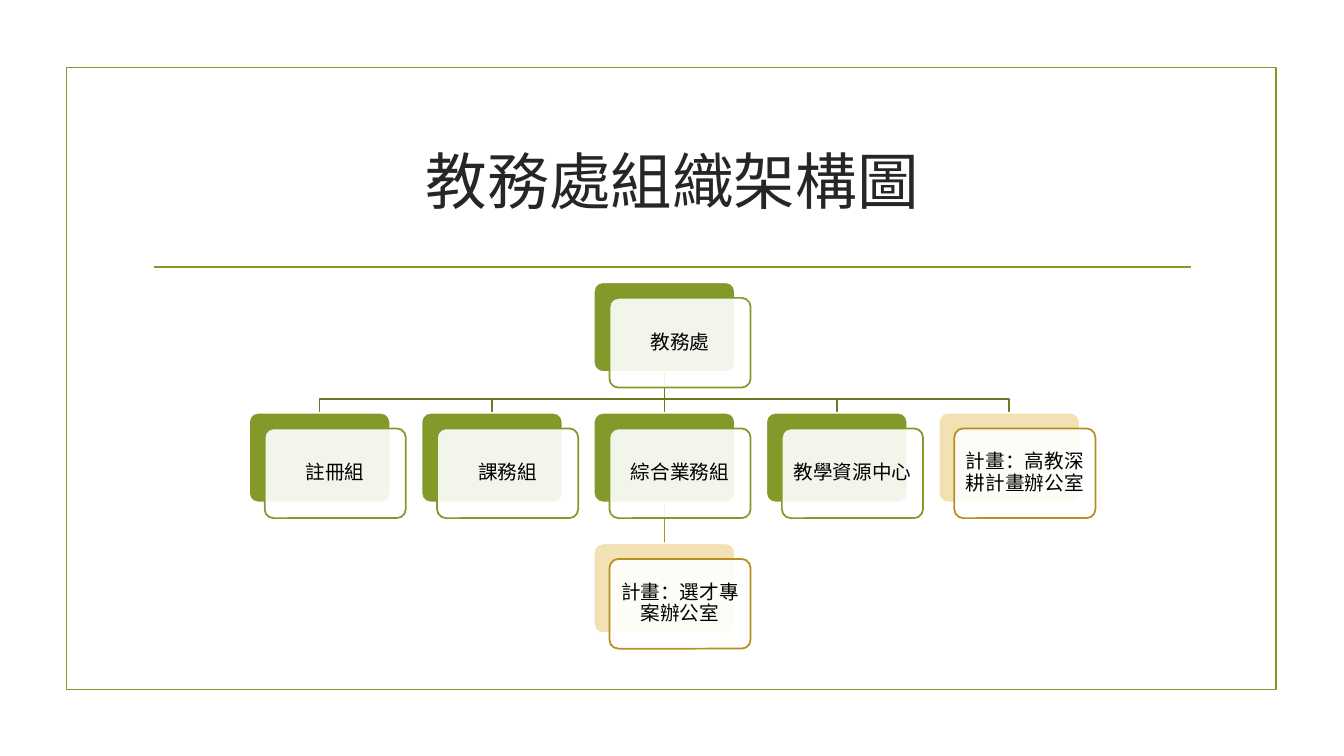
from lxml import etree
from pptx import Presentation
from pptx import util as u
from pptx.dml.color import RGBColor
from pptx.enum import shapes, text
from pptx.oxml.ns import qn

THEME = {
    "font": "Times New Roman",
    "title_size": u.Pt(44),
    "label_size": u.Pt(14),
    "line_width": u.Pt(1.25),
    "title": RGBColor.from_string("262626"),
    "label": RGBColor.from_string("000000"),
    "white": RGBColor.from_string("FFFFFF"),
    "green": RGBColor.from_string("83992A"),
    "dark_green": RGBColor.from_string("697B22"),
    "gold": RGBColor.from_string("B78E20"),
    "pale_gold": RGBColor.from_string("F2E1B3"),
}


def style_line(shape, color):
    shape.line.color.rgb = THEME[color]
    shape.line.width = THEME["line_width"]
    properties = shape._element.spPr
    if properties.find(qn("a:effectLst")) is None:
        etree.SubElement(properties, qn("a:effectLst"))


def add_run(paragraph, wording, size, color):
    paragraph.alignment = text.PP_ALIGN.CENTER
    run = paragraph.add_run()
    run.text = wording
    run.font.name = THEME["font"]
    run.font.size = THEME[size]
    run.font.color.rgb = THEME[color]


presentation = Presentation()
presentation.slide_width = u.Inches(13.33)
presentation.slide_height = u.Inches(7.5)
slide = presentation.slides.add_slide(presentation.slide_layouts[5])

title = slide.shapes.title
title.left, title.top = u.Inches(1.42), u.Inches(1.07)
title.width, title.height = u.Inches(10.5), u.Inches(1.43)
title.text_frame.vertical_anchor = text.MSO_ANCHOR.MIDDLE
add_run(title.text_frame.paragraphs[0], "教務處組織架構圖", "title_size", "title")

frame = slide.shapes.add_shape(
    shapes.MSO_SHAPE.RECTANGLE, u.Inches(0.66), u.Inches(0.67), u.Inches(12), u.Inches(6.17))
frame.fill.background()
style_line(frame, "green")

rule = slide.shapes.add_connector(
    shapes.MSO_CONNECTOR.STRAIGHT, u.Inches(1.53), u.Inches(2.65), u.Inches(11.81), u.Inches(2.65))
style_line(rule, "green")

BOX_WIDTH, BOX_HEIGHT = 1.4, 0.89
COLUMN_STEP, ROW_STEP = 1.71, 1.295
LEFT, TOP = 2.47, 2.8
ROOT_COLUMN = 2
OFFSET = 0.155

units = [
    ("教務處", 2, 0, "green", "green"),
    ("註冊組", 0, 1, "green", "green"),
    ("課務組", 1, 1, "green", "green"),
    ("綜合業務組", 2, 1, "green", "green"),
    ("計畫：選才專案辦公室", 2, 2, "pale_gold", "gold"),
    ("教學資源中心", 3, 1, "green", "green"),
    ("計畫：高教深耕計畫辦公室", 4, 1, "pale_gold", "gold"),
]

root_x = LEFT + ROOT_COLUMN * COLUMN_STEP + BOX_WIDTH / 2
root_bottom = TOP + BOX_HEIGHT
for column in (4, 3, 1, 0):
    child_x = LEFT + column * COLUMN_STEP + BOX_WIDTH / 2
    builder = slide.shapes.build_freeform(u.Inches(root_x), u.Inches(root_bottom))
    corners = [(root_x, 3.96), (child_x, 3.96), (child_x, TOP + ROW_STEP)]
    builder.add_line_segments([(u.Inches(x), u.Inches(y)) for x, y in corners], close=False)
    branch = builder.convert_to_shape()
    branch.fill.background()
    style_line(branch, "dark_green")

stems = []
for row, color in ((1, "gold"), (0, "dark_green")):
    stem = slide.shapes.add_connector(
        shapes.MSO_CONNECTOR.STRAIGHT,
        u.Inches(root_x), u.Inches(root_bottom + row * ROW_STEP),
        u.Inches(root_x), u.Inches(TOP + (row + 1) * ROW_STEP))
    style_line(stem, color)
    stems.append((stem, row))

backs = {}
for name, column, row, back_color, border_color in units:
    left, top = LEFT + column * COLUMN_STEP, TOP + row * ROW_STEP
    for shift, fill_color, line_color in ((0, back_color, "white"), (OFFSET, "white", border_color)):
        card = slide.shapes.add_shape(
            shapes.MSO_SHAPE.ROUNDED_RECTANGLE, u.Inches(left + shift), u.Inches(top + shift),
            u.Inches(BOX_WIDTH), u.Inches(BOX_HEIGHT))
        card.adjustments[0] = 0.1
        card.fill.solid()
        card.fill.fore_color.rgb = THEME[fill_color]
        style_line(card, line_color)
        if not shift:
            backs[column, row] = card

    fill = card._element.spPr.find(qn("a:solidFill"))
    etree.SubElement(fill[0], qn("a:alpha"), val="90000")
    label = card.text_frame
    label.word_wrap = True
    label.vertical_anchor = text.MSO_ANCHOR.MIDDLE
    label.margin_left = label.margin_right = u.Inches(0.06)
    label.margin_top = label.margin_bottom = u.Inches(0.06)
    label.paragraphs[0].line_spacing = 0.9
    add_run(label.paragraphs[0], name, "label_size", "label")

for stem, row in stems:
    stem.begin_connect(backs[ROOT_COLUMN, row], 2)
    stem.end_connect(backs[ROOT_COLUMN, row + 1], 0)

presentation.save("out.pptx")
